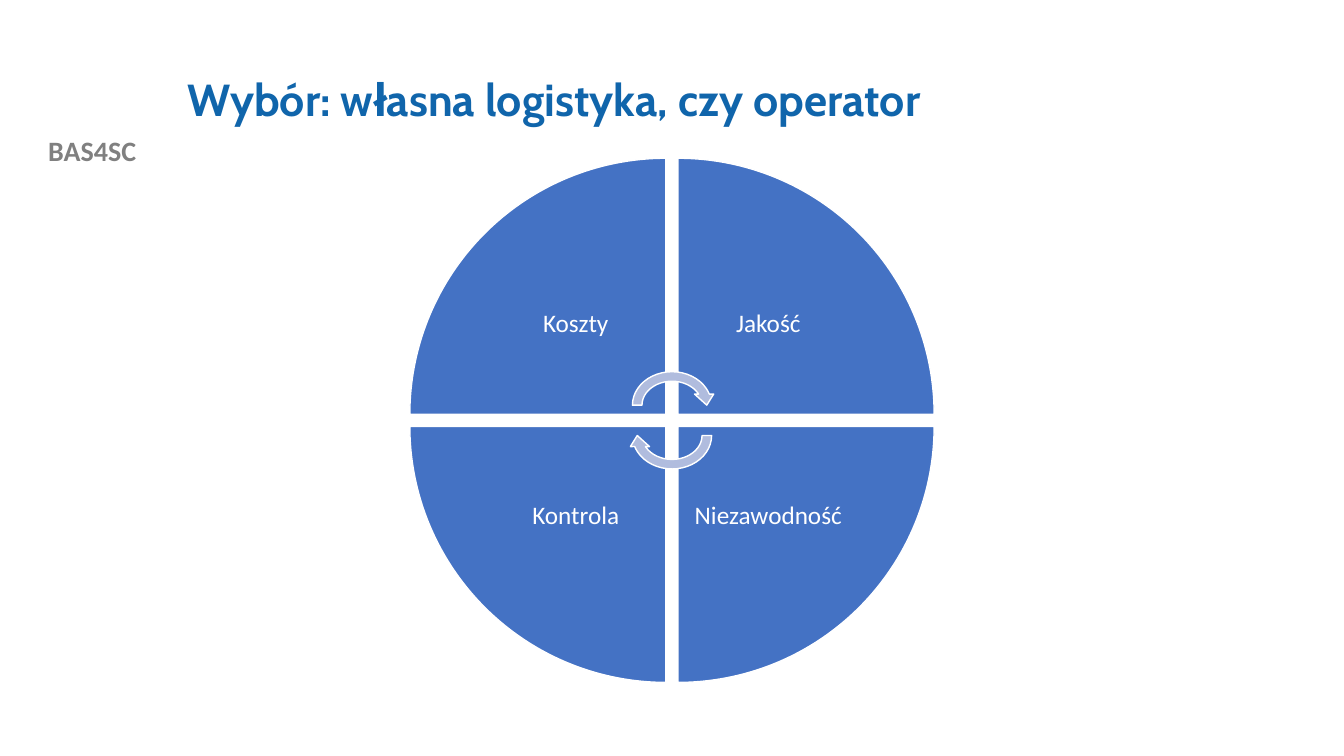
"""Build a slide with a four-part wheel on choosing own logistics or an operator."""
from pptx import Presentation
from pptx.dml.color import RGBColor
from pptx.enum.shapes import MSO_SHAPE
from pptx.enum.text import MSO_ANCHOR, PP_ALIGN
from pptx.util import Inches, Pt

TITLE = "Wybór: własna logistyka, czy operator"
TAG = "BAS4SC"
PARTS = [
    ("Koszty", -1, -1, 0),
    ("Jakość", 1, -1, 90),
    ("Niezawodność", 1, 1, 180),
    ("Kontrola", -1, 1, 270),
]
TURNS = [(-1, 0), (1, 180)]

WEDGE, ARROW = MSO_SHAPE.PIE_WEDGE, MSO_SHAPE.CIRCULAR_ARROW
MIDDLE, TOP = MSO_ANCHOR.MIDDLE, MSO_ANCHOR.TOP
CENTER, LEFT = PP_ALIGN.CENTER, PP_ALIGN.LEFT
WHITE = RGBColor(0xFF, 0xFF, 0xFF)
GREY = RGBColor(0x80, 0x80, 0x80)
NAVY = RGBColor(0x10, 0x65, 0xAB)
BLUE = RGBColor(0x44, 0x72, 0xC4)
PALE = RGBColor(0xB0, 0xBC, 0xDE)

WIDE, HIGH = 13.33, 7.5
MID_X, MID_Y = WIDE / 2, 4.17
GAP = 0.12
RADIUS = 2.54
LABEL = 1.79
TURN_W, TURN_H, TURN_OFF = 0.88, 0.76, 0.15


def add_text(slide, text, box, size, font, color, bold=False,
             align=CENTER, anchor=MIDDLE, space=1.0, inset=None):
    frame = slide.shapes.add_textbox(*map(Inches, box)).text_frame
    frame.word_wrap = True
    frame.vertical_anchor = anchor
    if inset is not None:
        frame.margin_left = frame.margin_right = Inches(inset)
        frame.margin_top = frame.margin_bottom = Inches(inset)
    frame.text = text
    para = frame.paragraphs[0]
    para.alignment = align
    para.line_spacing = space
    face = para.runs[0].font
    face.size, face.name, face.bold = Pt(size), font, bold
    face.color.rgb = color


def add_part(slide, kind, box, turn, color):
    shape = slide.shapes.add_shape(kind, *map(Inches, box))
    shape.shadow.inherit = False
    shape.rotation = turn
    shape.fill.solid()
    shape.fill.fore_color.rgb = color
    shape.line.color.rgb = WHITE
    shape.line.width = Pt(1)


def inner_box(side_x, side_y, size):
    """Return a square that touches the inner corner of one quarter."""
    reach = (GAP + size) / 2
    return (MID_X + side_x * reach - size / 2,
            MID_Y + side_y * reach - size / 2, size, size)


def main():
    deck = Presentation()
    deck.slide_width, deck.slide_height = Inches(WIDE), Inches(HIGH)
    slide = deck.slides.add_slide(deck.slide_layouts[6])

    add_text(slide, TAG, (0, 1.28, 1.83, 0.44), 20, "Calibri", GREY,
             bold=True, anchor=TOP)
    add_text(slide, TITLE, (1.76, 0.4, 10.66, 1.22), 32, "Cabin", NAVY,
             bold=True, align=LEFT, space=0.9)

    for name, side_x, side_y, turn in PARTS:
        add_part(slide, WEDGE, inner_box(side_x, side_y, RADIUS), turn, BLUE)
        add_text(slide, name, inner_box(side_x, side_y, LABEL), 18, "Calibri",
                 WHITE, space=0.9, inset=0.14)

    for side, turn in TURNS:
        top = MID_Y + side * TURN_OFF - TURN_H / 2
        box = (MID_X - TURN_W / 2, top, TURN_W, TURN_H)
        add_part(slide, ARROW, box, turn, PALE)

    deck.save("out.pptx")


if __name__ == "__main__":
    main()
